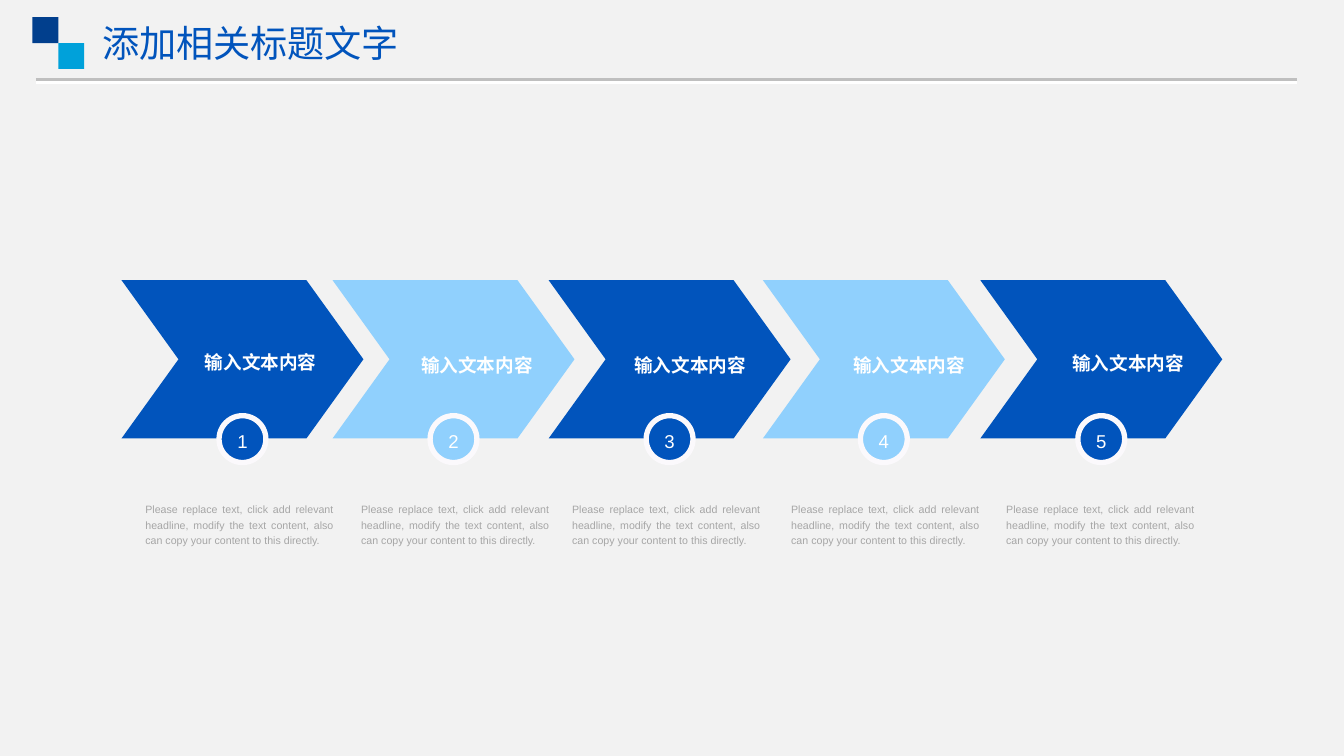
from dataclasses import dataclass

from lxml.etree import SubElement
from pptx import Presentation
from pptx.dml.color import RGBColor
from pptx.enum.shapes import MSO_CONNECTOR, MSO_SHAPE
from pptx.enum.text import MSO_ANCHOR, MSO_AUTO_SIZE, PP_ALIGN
from pptx.oxml.ns import qn
from pptx.util import Pt


@dataclass(frozen=True)
class Theme:
    paper: str = "F2F2F2"
    blue: str = "0154BC"
    sky: str = "90D0FD"
    navy: str = "013F8D"
    cyan: str = "00A1DA"
    rule: str = "BFBFBF"
    ring: str = "FBF9FC"
    white: str = "FFFFFF"
    grey: str = "A6A6A6"
    font: str = "Arial"
    head_font: str = "Noto Sans CJK SC"
    head: int = 28
    label: int = 14
    body: int = 8


theme = Theme()


def add_form(kind, left, top, width, height, color):
    form = slide.shapes.add_shape(kind, Pt(left), Pt(top), Pt(width), Pt(height))
    form.shadow.inherit = False
    form.fill.solid()
    form.fill.fore_color.rgb = RGBColor.from_string(color)
    form.line.fill.background()
    return form


def write(shape, text, size, color, align, anchor=MSO_ANCHOR.MIDDLE, bold=False):
    frame = shape.text_frame
    frame.word_wrap = True
    frame.auto_size = MSO_AUTO_SIZE.NONE
    frame.vertical_anchor = anchor
    frame.margin_left = frame.margin_right = 0
    frame.margin_top = frame.margin_bottom = 0
    para = frame.paragraphs[0]
    para.alignment = align
    para.line_spacing = 1.2
    run = para.add_run()
    run.text = text
    run.font.name = theme.font
    run.font.size = Pt(size)
    run.font.bold = bold
    run.font.color.rgb = RGBColor.from_string(color)
    return run


deck = Presentation()
deck.slide_width, deck.slide_height = Pt(1012.5), Pt(569.5)
slide = deck.slides.add_slide(deck.slide_layouts[5])
slide.background.fill.solid()
slide.background.fill.fore_color.rgb = RGBColor.from_string(theme.paper)

# Title with its two squares
title = slide.shapes.title
title.left, title.top, title.width, title.height = Pt(77), Pt(8), Pt(254), Pt(48)
run = write(title, "添加相关标题文字", theme.head, theme.blue, PP_ALIGN.LEFT)
title.text_frame.margin_left = Pt(0)
title.left = Pt(77)
title.text_frame.paragraphs[0].line_spacing = 1
run.font.name = theme.head_font
SubElement(run.font._element, qn("a:ea"), typeface=theme.head_font)
side = 19.5
for step, color in enumerate([theme.navy, theme.cyan]):
    add_form(MSO_SHAPE.RECTANGLE, 24.5 + step * side, 13 + step * side, side, side, color)

# Rule under the title, with a white edge below
rule = slide.shapes.add_connector(MSO_CONNECTOR.STRAIGHT, Pt(27), Pt(60), Pt(977), Pt(60))
rule.line.width = Pt(2.25)
rule.line.color.rgb = RGBColor.from_string(theme.rule)
effect = SubElement(rule._element.spPr, qn("a:effectLst"))
edge = SubElement(effect, qn("a:outerShdw"), blurRad="0", dist=str(Pt(2)),
                  dir="5400000", algn="t", rotWithShape="0")
SubElement(edge, qn("a:srgbClr"), val=theme.white)

# Five steps: arrow left, label centre x and y, caption left
steps = [
    (91.5, 196.5, 271.4, 109.5),
    (250.5, 359.3, 273.2, 272),
    (413.3, 520, 273.2, 431),
    (574.7, 685, 273.2, 596),
    (738.5, 850, 272.2, 758),
]
caption = ("Please replace text, click add relevant headline, modify the text content, "
           "also can copy your content to this directly.")
top, width, height = 211, 182.3, 119.3
disc = 35.3
for number, (left, mid_x, mid_y, note_x) in enumerate(steps, 1):
    color = theme.blue if number % 2 else theme.sky
    arrow = add_form(MSO_SHAPE.CHEVRON, left, top, width, height, color)
    arrow.adjustments[0] = 0.36

    label = slide.shapes.add_textbox(Pt(mid_x - 60), Pt(mid_y - 13), Pt(120), Pt(26))
    write(label, "输入文本内容", theme.label, theme.white, PP_ALIGN.CENTER, bold=True)

    badge = add_form(MSO_SHAPE.OVAL, left + (width - disc) / 2,
                     top + height - disc / 2 + 0.5, disc, disc, color)
    badge.line.color.rgb = RGBColor.from_string(theme.ring)
    badge.line.width = Pt(4)
    write(badge, str(number), theme.label, theme.white, PP_ALIGN.CENTER)

    note = slide.shapes.add_textbox(Pt(note_x), Pt(377.3), Pt(142), Pt(34))
    write(note, caption, theme.body, theme.grey, PP_ALIGN.JUSTIFY, MSO_ANCHOR.TOP)

deck.save("out.pptx")
